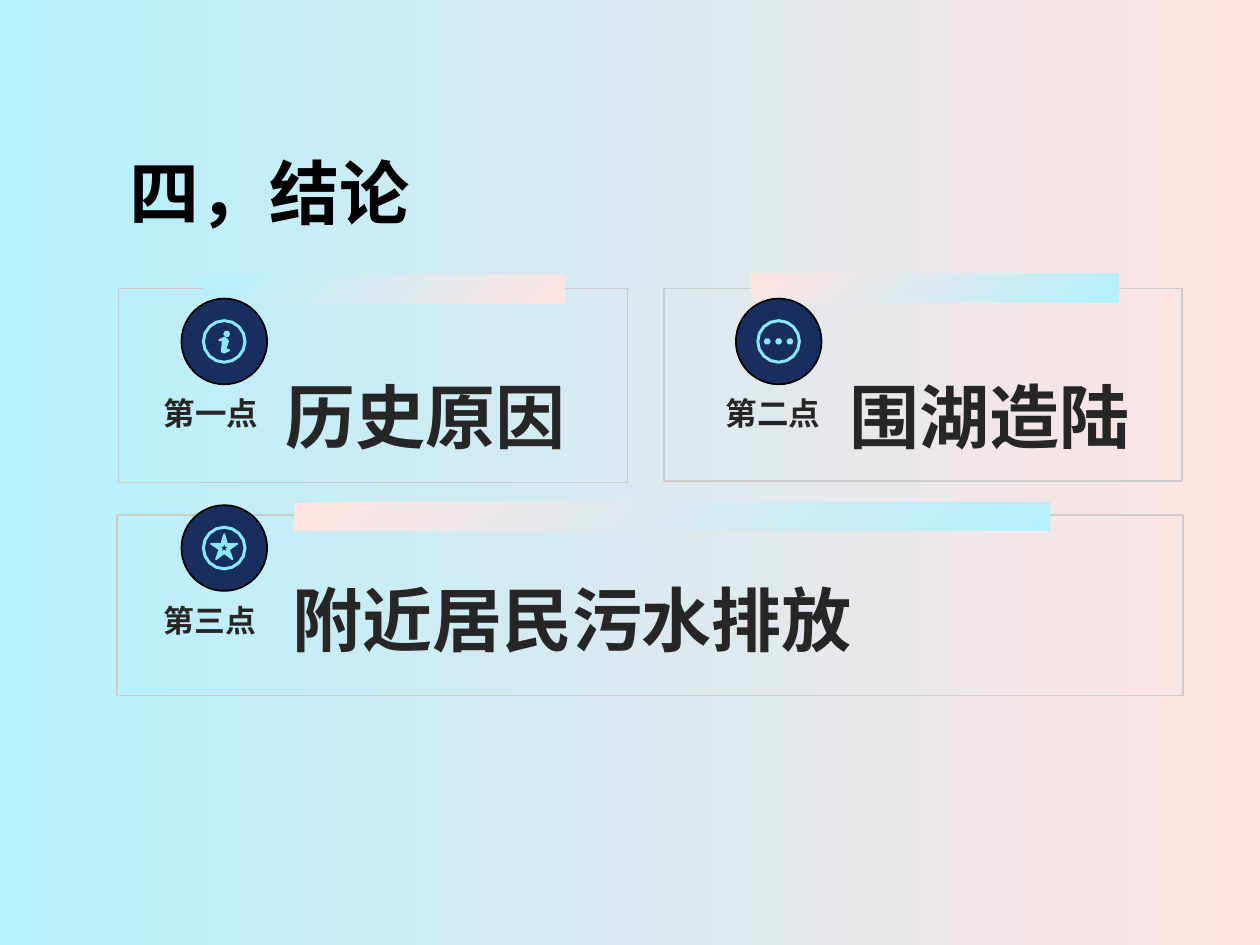
from dataclasses import dataclass
from math import cos, pi, sin

from lxml import etree
from pptx import Presentation
from pptx.dml.color import RGBColor
from pptx.enum.shapes import MSO_SHAPE
from pptx.enum.text import MSO_ANCHOR, MSO_AUTO_SIZE, PP_ALIGN
from pptx.oxml.ns import qn
from pptx.util import Inches, Pt

RECT, OVAL = MSO_SHAPE.RECTANGLE, MSO_SHAPE.OVAL
MIDDLE, BOTTOM = MSO_ANCHOR.MIDDLE, MSO_ANCHOR.BOTTOM
LEFT = PP_ALIGN.LEFT
NO_FIT = MSO_AUTO_SIZE.NONE


@dataclass(frozen=True)
class Theme:
    aqua: str = "B5F0FC"
    pink: str = "FFE4E3"
    frame: str = "CCCCCC"
    navy: str = "182E5F"
    icon: str = "8BE8FA"
    black: str = "000000"
    ink: str = "262626"
    latin: str = "Arial"
    han: str = "Noto Sans CJK SC"
    big: float = 40
    small: float = 18
    less: float = 17.6


THEME = Theme()
DISC = 0.68


def rgb(code):
    return RGBColor.from_string(code)


def blend(fill, first, last, angle):
    fill.gradient()
    fill.gradient_angle = angle
    for stop, code, pos in zip(fill.gradient_stops, (first, last), (0, 1)):
        stop.color.rgb = rgb(code)
        stop.position = pos


def paint(shape, fill, line):
    shape.shadow.inherit = False
    if fill:
        shape.fill.solid()
        shape.fill.fore_color.rgb = rgb(fill)
    else:
        shape.fill.background()
    shape.line.color.rgb = rgb(line)
    shape.line.width = Pt(1)


def write(shape, text, size, color, font, anchor=MIDDLE, space=None, foot=0.04):
    frame = shape.text_frame
    frame.word_wrap = True
    frame.auto_size = NO_FIT
    frame.vertical_anchor = anchor
    frame.margin_left = frame.margin_right = Inches(0.07)
    frame.margin_top, frame.margin_bottom = Inches(0.04), Inches(foot)
    para = frame.paragraphs[0]
    para.alignment = LEFT
    if space:
        para.line_spacing = space
    run = para.add_run()
    run.text = text
    run.font.size = Pt(size)
    run.font.bold = True
    run.font.name = font
    run.font.color.rgb = rgb(color)
    # Han characters take their own typeface
    face = etree.Element(qn("a:ea"), typeface=THEME.han)
    run.font._element.find(qn("a:latin")).addnext(face)


def add_text(slide, box, text, size, font, space=None, foot=0.04):
    shape = slide.shapes.add_textbox(*map(Inches, box))
    write(shape, text, size, THEME.ink, font, space=space, foot=foot)


def add_panel(slide, box, bar, first, last):
    group = slide.shapes.add_group_shape()
    frame = group.shapes.add_shape(RECT, *map(Inches, box))
    paint(frame, None, THEME.frame)
    strip = group.shapes.add_shape(RECT, *map(Inches, bar))
    strip.shadow.inherit = False
    blend(strip.fill, first, last, 315)
    strip.line.fill.background()


# Icon outlines, in inches from the centre
def circle(radius, x=0, y=0, count=6):
    turns = (2 * pi * i / count for i in range(count))
    return [(x + radius * cos(t), y + radius * sin(t)) for t in turns]


def star(outer, inner):
    spokes = [(outer if i % 2 == 0 else inner, pi * i / 5) for i in range(10)]
    return [(r * sin(t), -r * cos(t)) for r, t in spokes]


RING = [circle(r, count=16) for r in (0.17, 0.16)]
STEM = [(-0.04, -0.01), (0, -0.03), (0.02, -0.02), (0.03, 0), (0.01, 0.06),
        (0.04, 0.07), (0, 0.09), (-0.02, 0.08), (-0.01, -0.01)]
INFO = RING + [circle(0.02, 0.02, -0.06), STEM]
DOTS = RING + [circle(0.02, x) for x in (-0.09, 0, 0.09)]
STAR = RING + [star(0.11, 0.04), star(0.06, 0.02)]


def add_disc(slide, left, top):
    disc = slide.shapes.add_shape(OVAL, *map(Inches, (left, top, DISC, DISC)))
    paint(disc, THEME.navy, THEME.black)


def add_icon(slide, left, top, icon):
    mid_x, mid_y = left + DISC / 2, top + DISC / 2
    loops = [[(Inches(mid_x + x), Inches(mid_y + y)) for x, y in loop]
             for loop in icon]
    pen = slide.shapes.build_freeform(*loops[0][0])
    pen.add_line_segments(loops[0][1:], close=True)
    for loop in loops[1:]:
        pen.move_to(*loop[0])
        pen.add_line_segments(loop[1:], close=True)
    paint(pen.convert_to_shape(), THEME.icon, THEME.icon)


def add_title(slide, text):
    title = slide.shapes.title
    title.left, title.top = Inches(0.96), Inches(1.41)
    title.width, title.height = Inches(8.43), Inches(0.48)
    write(title, text, THEME.big, THEME.black, THEME.han, BOTTOM)


def main():
    deck = Presentation()
    deck.slide_width, deck.slide_height = Inches(10), Inches(7.5)
    slide = deck.slides.add_slide(deck.slide_layouts[5])
    blend(slide.background.fill, THEME.aqua, THEME.pink, 0)
    add_title(slide, "四，结论")

    # Framed panels with a colour strip on the top edge
    aqua, pink = THEME.aqua, THEME.pink
    add_panel(slide, (0.93, 4.09, 8.46, 1.43), (2.33, 3.99, 6, 0.22), pink, aqua)
    add_panel(slide, (5.27, 2.29, 4.11, 1.53), (5.96, 2.17, 2.92, 0.23), pink, aqua)
    add_panel(slide, (0.94, 2.29, 4.04, 1.54), (1.61, 2.18, 2.87, 0.23), aqua, pink)

    # Round badges
    spots = ((5.84, 2.37), (1.44, 4.01), (1.44, 2.37))
    for spot in spots:
        add_disc(slide, *spot)

    # Conclusions
    for box, text, font in (
        ((2.2, 2.65, 3.07, 1.1), "历史原因", THEME.latin),
        ((2.25, 4.36, 6.08, 0.9), "附近居民污水排放", THEME.han),
        ((6.67, 2.65, 2.52, 1.1), "围湖造陆", THEME.latin),
    ):
        add_text(slide, box, text, THEME.big, font, 1.3)

    # Point numbers
    for box, text, size, foot in (
        ((1.23, 3.13, 0.98, 0.3), "第一点", THEME.small, 0.04),
        ((1.23, 4.8, 1.61, 0.46), "第三点", THEME.less, 0.26),
        ((5.69, 3.13, 0.98, 0.3), "第二点", THEME.small, 0.04),
    ):
        add_text(slide, box, text, size, THEME.latin, foot=foot)

    # Icons inside the badges
    for spot, icon in zip(spots, (DOTS, STAR, INFO)):
        add_icon(slide, *spot, icon)

    deck.save("out.pptx")


if __name__ == "__main__":
    main()
